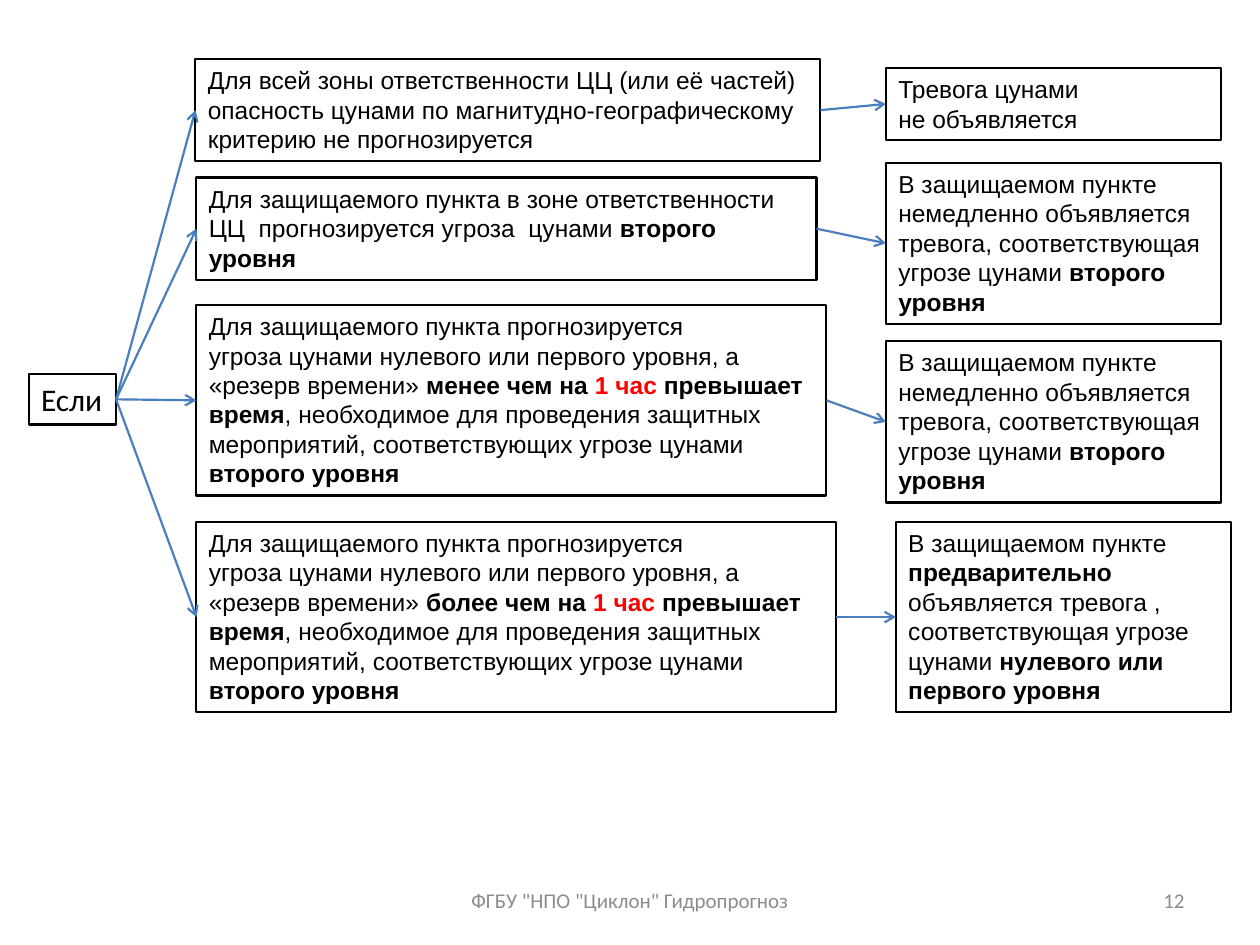
from lxml import etree
from pptx import Presentation
from pptx.dml.color import RGBColor
from pptx.enum.shapes import MSO_CONNECTOR, MSO_SHAPE
from pptx.enum.text import MSO_ANCHOR, MSO_AUTO_SIZE, PP_ALIGN
from pptx.oxml.ns import qn
from pptx.util import Cm, Pt

RECTANGLE = MSO_SHAPE.RECTANGLE
STRAIGHT = MSO_CONNECTOR.STRAIGHT
TOP, MIDDLE = MSO_ANCHOR.TOP, MSO_ANCHOR.MIDDLE
LEFT, CENTER, RIGHT = PP_ALIGN.LEFT, PP_ALIGN.CENTER, PP_ALIGN.RIGHT
GROW = MSO_AUTO_SIZE.SHAPE_TO_FIT_TEXT
LEFT_SITE, RIGHT_SITE = 1, 3  # connection sites of a rectangle

BLACK, RED, BLUE, GREY = "000000", "FF0000", "4B7EBC", "8C8C8C"
LINE_WIDTH = Pt(1.25)
RESULT_WIDTH = 6.76

# Content: a text is a list of paragraphs, a paragraph a list of
# (words, bold, colour) spans


def plain(words):
    return (words, False, BLACK)


def bold(words, color=BLACK):
    return (words, True, color)


def reserve_condition(comparison):
    return [
        [plain("Для защищаемого пункта прогнозируется")],
        [plain("угроза цунами нулевого или первого уровня, а «резерв времени» "),
         bold(f"{comparison} чем на "), bold("1 час ", RED), bold("превышает время"),
         plain(", необходимое для проведения защитных мероприятий, "
               "соответствующих угрозе цунами "),
         bold("второго уровня")],
    ]


NO_DANGER = [
    [plain("Для всей зоны ответственности ЦЦ (или её частей)")],
    [plain("опасность цунами по магнитудно-географическому")],
    [plain("критерию не прогнозируется")],
]
NO_ALARM = [[plain("Тревога цунами")], [plain("не объявляется")]]
SECOND_LEVEL = [[
    plain("Для защищаемого пункта в зоне ответственности "
          "ЦЦ  прогнозируется угроза  цунами "),
    bold("второго уровня"),
]]
IMMEDIATE_ALARM = [
    [plain("В защищаемом пункте немедленно объявляется")],
    [plain("тревога, соответствующая угрозе цунами"), bold(" второго уровня")],
]
PRELIMINARY_ALARM = [[
    plain("В защищаемом пункте "), bold("предварительно"),
    plain(" объявляется тревога , соответствующая угрозе цунами "),
    bold("нулевого или первого уровня"),
]]

# Each row: condition text, its place, wrapping, result text, its place (cm)
ROWS = [
    (NO_DANGER, (3.94, 1.19, 12.6, 2.06), False,
     NO_ALARM, (17.86, 1.37, RESULT_WIDTH, 1.45)),
    (SECOND_LEVEL, (3.96, 3.58, 12.5, 2.06), True,
     IMMEDIATE_ALARM, (17.86, 3.28, RESULT_WIDTH, 3.25)),
    (reserve_condition("менее"), (3.96, 6.15, 12.7, 3.84), True,
     IMMEDIATE_ALARM, (17.86, 6.88, RESULT_WIDTH, 3.25)),
    (reserve_condition("более"), (3.96, 10.52, 12.9, 3.84), True,
     PRELIMINARY_ALARM, (18.06, 10.52, RESULT_WIDTH, 3.84)),
]
START = [[plain("Если")]]
START_PLACE = (0.58, 7.54, 1.76, 1.02)

# Footer: words, place (cm), alignment
FOOTER = [
    ('ФГБУ "НПО "Циклон" Гидропрогноз', (8.68, 17.65, 8.04, 1.01), CENTER),
    ("12", (18.2, 17.65, 5.93, 1.01), RIGHT),
]


def rgb(color):
    return RGBColor.from_string(color)


def write_text(box, text, *, font="Arial", size=14, align=LEFT, anchor=TOP, wrap=True):
    frame = box.text_frame
    frame.word_wrap = wrap
    frame.vertical_anchor = anchor
    for number, spans in enumerate(text):
        para = frame.add_paragraph() if number else frame.paragraphs[0]
        para.alignment = align
        for words, is_bold, color in spans:
            span = para.add_run()
            span.text = words
            span.font.name = font
            span.font.size = Pt(size)
            span.font.bold = is_bold
            span.font.color.rgb = rgb(color)


def add_box(page, place, text, **text_format):
    box = page.shapes.add_shape(RECTANGLE, *map(Cm, place))
    box.shadow.inherit = False
    box.fill.background()
    box.line.color.rgb = rgb(BLACK)
    box.line.width = LINE_WIDTH
    write_text(box, text, **text_format)
    box.text_frame.auto_size = GROW
    return box


def add_arrow(page, source, target):
    arrow = page.shapes.add_connector(STRAIGHT, 0, 0, 0, 0)
    arrow.begin_connect(source, RIGHT_SITE)
    arrow.end_connect(target, LEFT_SITE)
    arrow.line.color.rgb = rgb(BLUE)
    arrow.line.width = LINE_WIDTH
    properties = arrow.line._get_or_add_ln()
    etree.SubElement(properties, qn("a:tailEnd"), type="arrow")
    etree.SubElement(properties.getparent(), qn("a:effectLst"))


def main():
    deck = Presentation()
    deck.slide_width, deck.slide_height = Cm(25.4), Cm(19.05)
    page = deck.slides.add_slide(deck.slide_layouts[6])

    # Footer and slide number
    for words, place, align in FOOTER:
        box = page.shapes.add_textbox(*map(Cm, place))
        write_text(box, [[(words, False, GREY)]], font="Calibri", size=12,
                   align=align, anchor=MIDDLE)

    # Decision tree: start, conditions, results
    start = add_box(page, START_PLACE, START, font="Calibri", size=18, wrap=False)
    for condition, condition_place, wrap, result, result_place in ROWS:
        condition_box = add_box(page, condition_place, condition, wrap=wrap)
        result_box = add_box(page, result_place, result)
        add_arrow(page, start, condition_box)
        add_arrow(page, condition_box, result_box)

    deck.save("out.pptx")


if __name__ == "__main__":
    main()
